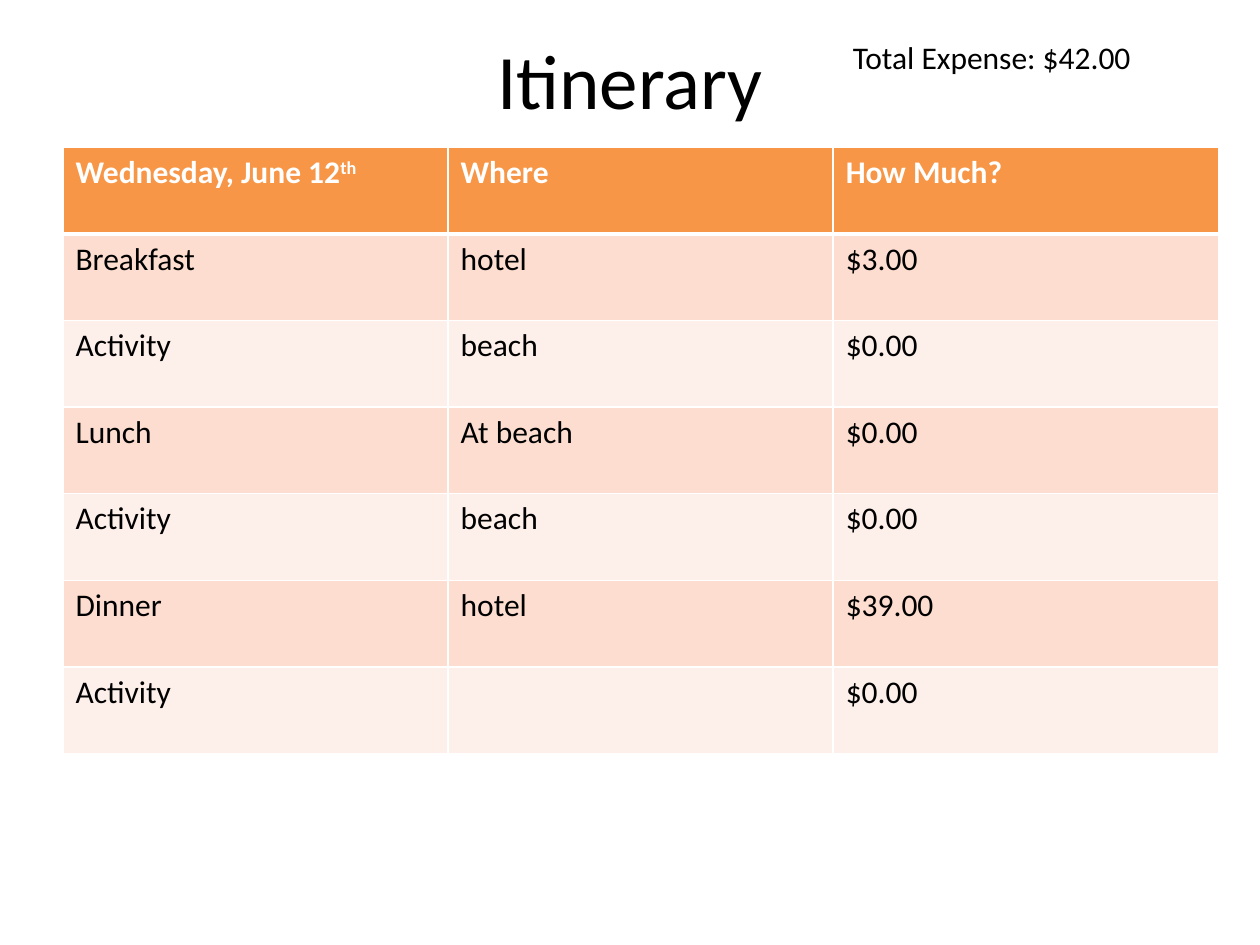
from pptx import Presentation
from pptx.dml.color import RGBColor
from pptx.enum.text import MSO_ANCHOR, PP_ALIGN
from pptx.oxml import parse_xml
from pptx.oxml.ns import nsdecls
from pptx.util import Inches, Pt

FONT = "Calibri"
BLACK, WHITE = "000000", "FFFFFF"
HEADER_FILL = "F79646"
BAND_FILLS = ("FCDDCF", "FDEFE9")
HEADINGS = ("Wednesday, June 12", "Where", "How Much?")
PLANS = (
    ("Breakfast", "hotel", "$3.00"),
    ("Activity", "beach", "$0.00"),
    ("Lunch", "At beach", "$0.00"),
    ("Activity", "beach", "$0.00"),
    ("Dinner", "hotel", "$39.00"),
    ("Activity", "", "$0.00"),
)


def color(hex_value):
    return RGBColor.from_string(hex_value)


def format_paragraph(paragraph, size, font_color=BLACK, bold=False):
    font = paragraph.font
    font.name = FONT
    font.size = Pt(size)
    font.bold = bold
    font.color.rgb = color(font_color)


def add_title(slide, text):
    title = slide.shapes.title
    title.left, title.top = Inches(0.5), Inches(0)
    title.width, title.height = Inches(9), Inches(1.25)
    title.text_frame.text = text
    title.text_frame.vertical_anchor = MSO_ANCHOR.MIDDLE
    paragraph = title.text_frame.paragraphs[0]
    paragraph.alignment = PP_ALIGN.CENTER
    format_paragraph(paragraph, 44)


def add_total(slide, text):
    box = slide.shapes.add_textbox(Inches(6.67), Inches(0.25), Inches(3.08), Inches(0.4))
    box.text_frame.word_wrap = True
    box.text_frame.text = text
    format_paragraph(box.text_frame.paragraphs[0], 18)


def set_borders(cell, top, bottom):
    """Draw white cell borders; top and bottom widths are in points."""
    properties = cell._tc.get_or_add_tcPr()
    for side, width in (("L", 1), ("R", 1), ("T", top), ("B", bottom)):
        properties.append(parse_xml(
            f'<a:ln{side} {nsdecls("a")} w="{Pt(width)}"><a:solidFill>'
            f'<a:srgbClr val="{WHITE}"/></a:solidFill></a:ln{side}>'
        ))


def fill_cell(cell, text, row):
    is_header = row == 0
    cell.text = text
    format_paragraph(cell.text_frame.paragraphs[0], 18,
                     WHITE if is_header else BLACK, is_header)
    set_borders(cell, top=3 if row == 1 else 1, bottom=3 if is_header else 1)
    cell.fill.solid()
    cell.fill.fore_color.rgb = color(HEADER_FILL if is_header else BAND_FILLS[(row - 1) % 2])


def add_superscript(paragraph, text):
    run = paragraph.add_run()
    run.text = text
    run._r.get_or_add_rPr().set("baseline", "30000")


def add_itinerary(slide):
    rows = (HEADINGS, *PLANS)
    table = slide.shapes.add_table(
        len(rows), len(HEADINGS), Inches(0.5), Inches(1.17), Inches(9.17), Inches(4.81)
    ).table
    for row, texts in enumerate(rows):
        for column, text in enumerate(texts):
            fill_cell(table.cell(row, column), text, row)
    add_superscript(table.cell(0, 0).text_frame.paragraphs[0], "th")


def main():
    presentation = Presentation()
    presentation.slide_width, presentation.slide_height = Inches(10), Inches(7.5)
    slide = presentation.slides.add_slide(presentation.slide_layouts[5])
    add_title(slide, "Itinerary")
    add_total(slide, "Total Expense: $42.00")
    add_itinerary(slide)
    presentation.save("out.pptx")


if __name__ == "__main__":
    main()
